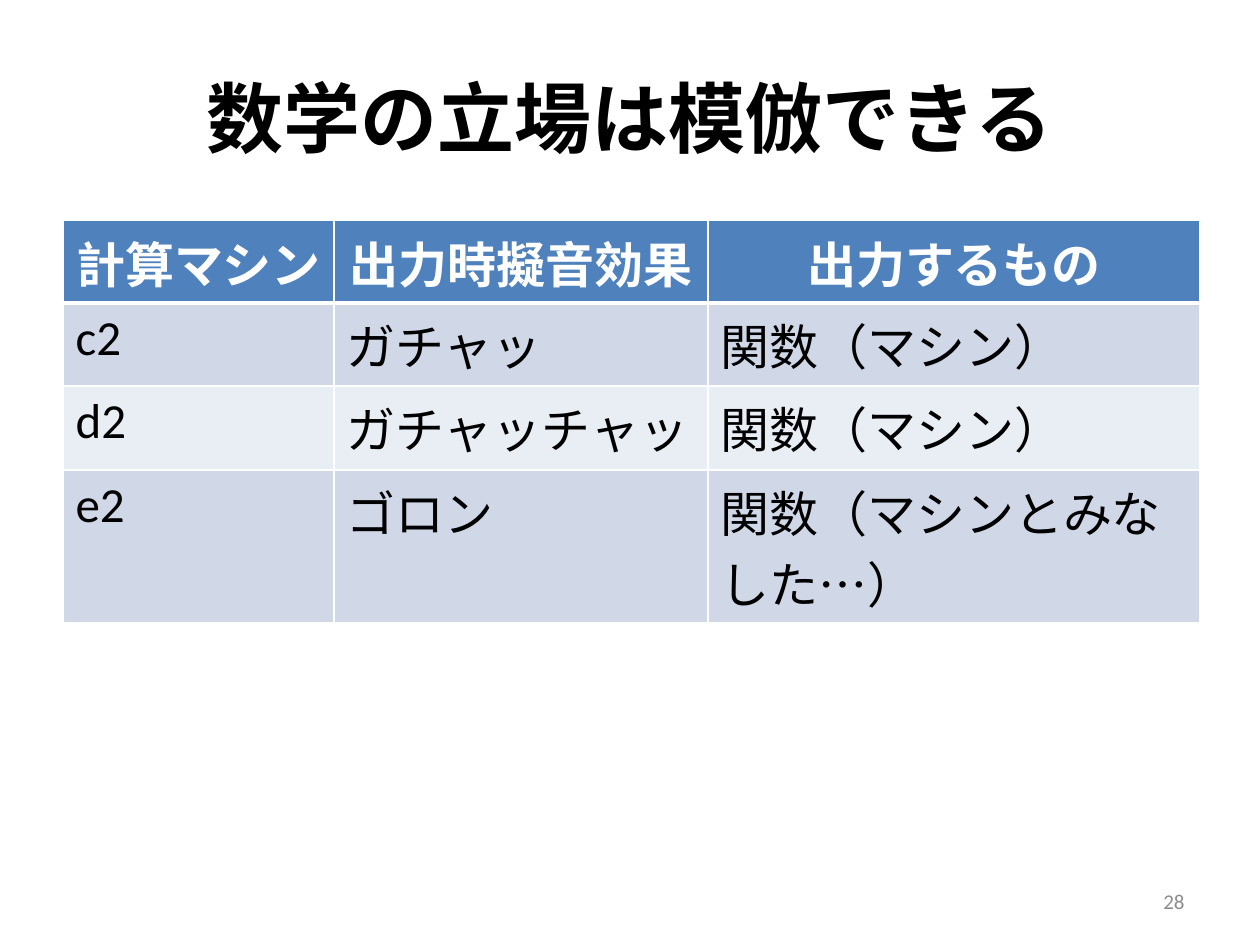
from dataclasses import dataclass

from lxml import etree
from pptx import Presentation, util as u
from pptx.dml.color import RGBColor
from pptx.enum import text
from pptx.oxml.ns import qn

PX = u.Inches(1) / 126


@dataclass(frozen=True)
class Theme:
    font: str = "Calibri"
    ink: str = "000000"
    white: str = "FFFFFF"
    gray: str = "8C8C8C"
    head: str = "4F81BD"
    bands: tuple = ("D0D8E8", "E9EDF4")
    title: int = 44
    body: int = 28
    small: int = 12


THEME = Theme()
ALIGN = text.PP_ALIGN
ROWS = [
    ("計算マシン", "出力時擬音効果", "出力するもの"),
    ("c2", "ガチャッ", "関数（マシン）"),
    ("d2", "ガチャッチャッ", "関数（マシン）"),
    ("e2", "ゴロン", "関数（マシンとみなした…）"),
]
COLS = (271, 374, 492)
HIGHS = (83, 83, 84, 153)


def emu(px):
    return u.Emu(round(px * PX))


def place(shape, box):
    shape.left, shape.top, shape.width, shape.height = map(emu, box)


def write(frame, words, size, color, align, bold=False):
    par = frame.paragraphs[0]
    par.alignment = align
    run = par.add_run()
    run.text = words
    font = run.font
    font.name, font.size, font.bold = THEME.font, u.Pt(size), bold
    font.color.rgb = RGBColor.from_string(color)


def border(cell, top, base):
    """Draw white cell edges; top and base are widths in points."""
    props = cell._tc.get_or_add_tcPr()
    edges = (("L", 1), ("R", 1), ("T", top), ("B", base))
    for spot, (side, width) in enumerate(edges):
        line = etree.Element(qn(f"a:ln{side}"), w=str(u.Pt(width)))
        fill = etree.SubElement(line, qn("a:solidFill"))
        etree.SubElement(fill, qn("a:srgbClr"), val=THEME.white)
        props.insert(spot, line)


def add_title(slide, box):
    title = slide.shapes.title
    place(title, box)
    frame = title.text_frame
    frame.vertical_anchor = text.MSO_ANCHOR.MIDDLE
    write(frame, "数学の立場は模倣できる", THEME.title, THEME.ink,
          ALIGN.CENTER, True)


def add_grid(slide, box):
    grid = slide.shapes.add_table(len(ROWS), len(COLS), *map(emu, box)).table
    for col, width in zip(grid.columns, COLS):
        col.width = emu(width)
    for r, (row, high) in enumerate(zip(ROWS, HIGHS)):
        grid.rows[r].height = emu(high)
        head = r == 0
        shade = THEME.head if head else THEME.bands[(r - 1) % 2]
        color = THEME.white if head else THEME.ink
        align = ALIGN.CENTER if head else ALIGN.LEFT
        top, base = (3 if r == 1 else 1), (3 if head else 1)
        for c, words in enumerate(row):
            cell = grid.cell(r, c)
            cell.fill.solid()
            cell.fill.fore_color.rgb = RGBColor.from_string(shade)
            write(cell.text_frame, words, THEME.body, color, align, head)
            border(cell, top, base)


def add_number(slide, box):
    frame = slide.shapes.add_textbox(*map(emu, box)).text_frame
    frame.word_wrap = True
    frame.vertical_anchor = text.MSO_ANCHOR.MIDDLE
    write(frame, "28", THEME.small, THEME.gray, ALIGN.RIGHT)


def main():
    deck = Presentation()
    deck.slide_width, deck.slide_height = emu(1260), emu(945)
    slide = deck.slides.add_slide(deck.slide_layouts[5])
    add_title(slide, (63, 38, 1134, 158))
    add_number(slide, (903, 876, 294, 50))
    add_grid(slide, (63, 220, sum(COLS), sum(HIGHS)))
    deck.save("out.pptx")


if __name__ == "__main__":
    main()
